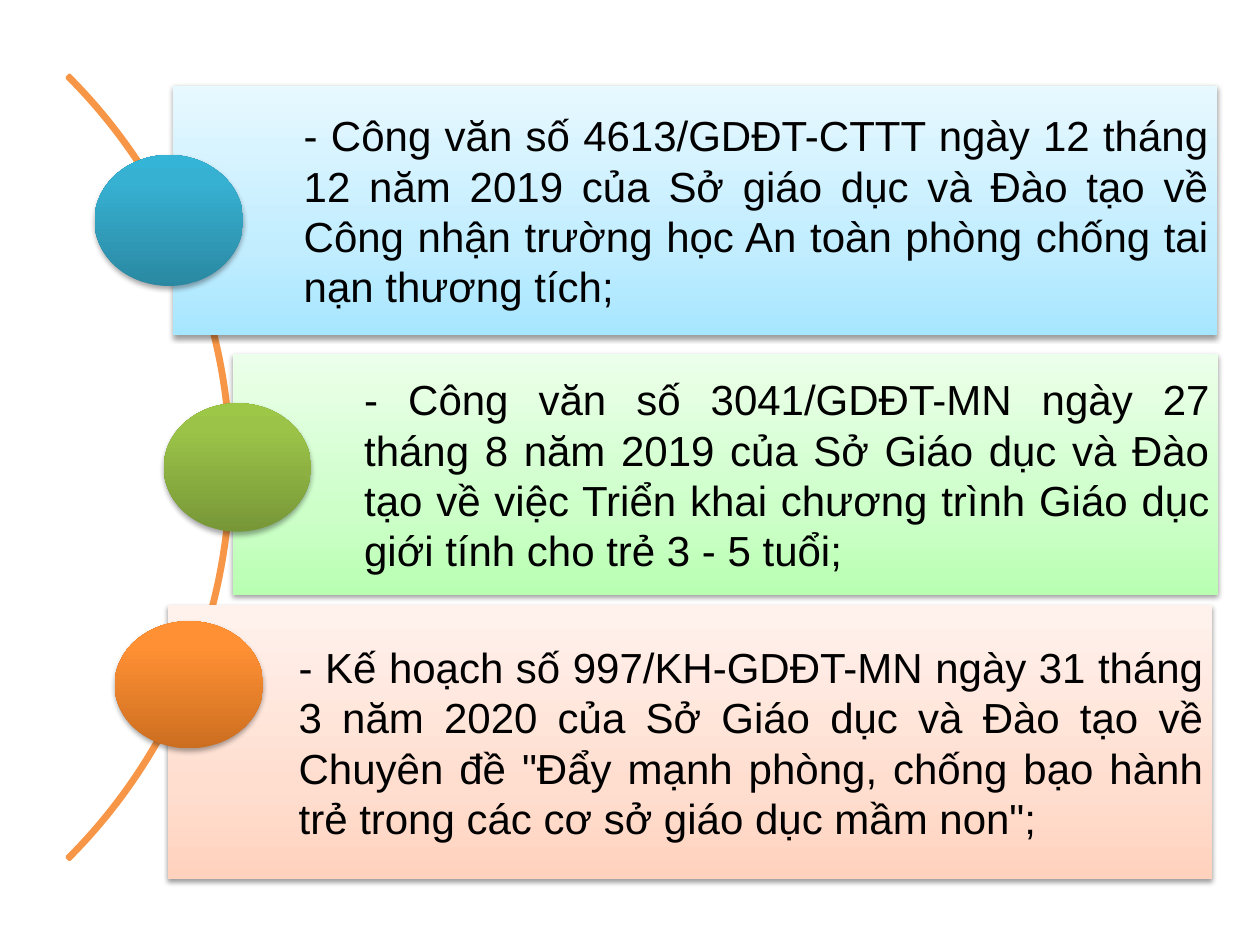
from copy import deepcopy

from lxml import etree
from pptx import Presentation
from pptx.dml.color import RGBColor
from pptx.enum.shapes import MSO_SHAPE
from pptx.enum.text import MSO_ANCHOR, PP_ALIGN
from pptx.oxml.ns import qn
from pptx.util import Inches, Pt

ARC, PANEL, DOT = MSO_SHAPE.BLOCK_ARC, MSO_SHAPE.RECTANGLE, MSO_SHAPE.OVAL
MIDDLE, JUSTIFY = MSO_ANCHOR.MIDDLE, PP_ALIGN.JUSTIFY

THEME = {
    "font": "Arial",
    "text_size": Pt(24),
    "text": RGBColor.from_string("000000"),
    "arc": RGBColor.from_string("F79646"),
    "arc_width": Pt(2),
    "panel_stops": (0, 0.35, 1),
    "dot_stops": (0, 0.8, 1),
    "blue": (("A7E6FF", "C1EDFF", "E7F8FF"), ("2A88A2", "37B1D2", "34B4D6")),
    "green": (("B9FFB2", "CDFFC9", "ECFFEA"), ("779737", "9BC348", "9DC746")),
    "orange": (("FFD2BD", "FFDED0", "FFF2ED"), ("CC6E20", "FF9034", "FF9136")),
}

presentation = Presentation()
presentation.slide_width, presentation.slide_height = Inches(10), Inches(7.5)
slide = presentation.slides.add_slide(presentation.slide_layouts[6])

# Places are given on a grid of 100 columns by 75 rows.
COLUMN = presentation.slide_width / 100
ROW = presentation.slide_height / 75


def add_on_grid(kind, left, top, width, height):
    shape = slide.shapes.add_shape(
        kind, round(left * COLUMN), round(top * ROW),
        round(width * COLUMN), round(height * ROW))
    shape.shadow.inherit = False
    return shape


def add_glossy(kind, place, colors, positions, shadow_opacity, shadow_distance):
    """Add a borderless shape with a bottom-to-top gradient and a shadow below."""
    shape = add_on_grid(kind, *place)
    shape.line.fill.background()
    shape.fill.gradient()
    shape.fill.gradient_angle = 90
    stop_list = shape._element.spPr.find(".//" + qn("a:gsLst"))
    stop_list.append(deepcopy(stop_list[0]))
    for stop, color, position in zip(shape.fill.gradient_stops, colors, positions):
        stop.color.rgb = RGBColor.from_string(color)
        stop.position = position
    effects = shape._element.spPr.find(qn("a:effectLst"))
    shadow = etree.SubElement(
        effects, qn("a:outerShdw"), blurRad=str(Pt(3.1)),
        dist=str(Pt(shadow_distance)), dir="5400000", rotWithShape="0")
    shadow_color = etree.SubElement(shadow, qn("a:srgbClr"), val="000000")
    etree.SubElement(shadow_color, qn("a:alpha"), val=str(shadow_opacity * 1000))
    return shape


arc = add_on_grid(ARC, -69.6, -6.9, 88, 88)
arc.adjustments[0], arc.adjustments[1], arc.adjustments[2] = 189, 27, 0.003
arc.fill.background()
arc.line.color.rgb = THEME["arc"]
arc.line.width = THEME["arc_width"]

documents = [
    ("blue", (13.7, 6.8, 82.9, 19.8), (7.5, 12.3, 11.8, 10.4),
     "- Công văn số 4613/GDĐT-CTTT ngày 12 tháng 12 năm 2019 của Sở giáo dục "
     "và Đào tạo về Công nhận trường học An toàn phòng chống tai nạn thương tích;"),
    ("green", (18.5, 28.1, 78.2, 19.1), (13, 32, 11.7, 10.2),
     "- Công văn số 3041/GDĐT-MN ngày 27 tháng 8 năm 2019 của Sở Giáo dục và "
     "Đào tạo về việc Triển khai chương trình Giáo dục giới tính cho trẻ 3 - 5 tuổi;"),
    ("orange", (13.3, 48, 82.9, 21.8), (9.1, 49.3, 11.8, 10.1),
     "- Kế hoạch số 997/KH-GDĐT-MN ngày 31 tháng 3 năm 2020 của Sở Giáo dục và "
     "Đào tạo về Chuyên đề \"Đẩy mạnh phòng, chống bạo hành trẻ trong các cơ sở "
     "giáo dục mầm non\";"),
]

for color_name, panel_place, dot_place, wording in documents:
    panel_colors, dot_colors = THEME[color_name]
    panel = add_glossy(PANEL, panel_place, panel_colors, THEME["panel_stops"], 38, 1.6)
    frame = panel.text_frame
    frame.word_wrap = True
    frame.vertical_anchor = MIDDLE
    frame.margin_left = round(10.4 * COLUMN)
    frame.margin_right = round(0.7 * COLUMN)
    frame.margin_top = frame.margin_bottom = round(0.7 * ROW)
    paragraph = frame.paragraphs[0]
    paragraph.text = wording
    paragraph.alignment = JUSTIFY
    paragraph.font.name = THEME["font"]
    paragraph.font.size = THEME["text_size"]
    paragraph.font.color.rgb = THEME["text"]
    add_glossy(DOT, dot_place, dot_colors, THEME["dot_stops"], 35, 1.8)

presentation.save("out.pptx")
